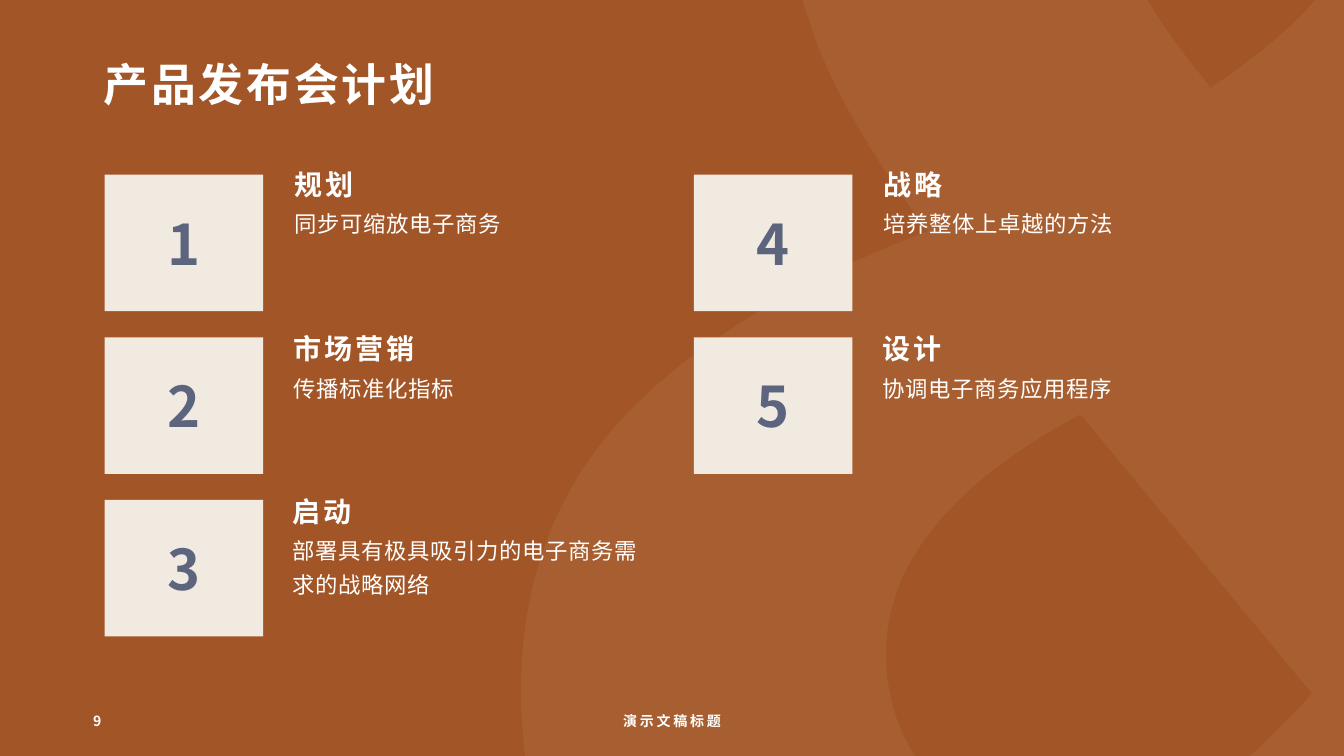
from typing import NamedTuple

from lxml.etree import SubElement
from pptx import Presentation
from pptx.dml.color import RGBColor
from pptx.enum.shapes import MSO_SHAPE
from pptx.enum.text import MSO_ANCHOR, PP_ALIGN
from pptx.oxml.ns import qn
from pptx.util import Cm, Pt

RUST = RGBColor(0xA2, 0x55, 0x26)
SAND = RGBColor(0xD6, 0xBF, 0xA5)
CREAM = RGBColor(0xF1, 0xEA, 0xE1)
SLATE = RGBColor(0x5D, 0x65, 0x7E)
WHITE = RGBColor(0xFF, 0xFF, 0xFF)
FONT = "Noto Sans CJK SC"

WIDTH, HEIGHT = 33.87, 19.05
BOX_WIDTH, BOX_HEIGHT = 3.99, 3.44
COLUMN_LEFTS = (2.64, 17.49)
BOX_TOP, ROW_PITCH = 4.4, 4.1
HEADING_TOPS = (4.25, 8.4, 12.49)

Point = tuple[float, float]


class Step(NamedTuple):
    number: str
    heading: str
    detail: str
    column: int
    row: int


STEPS = (
    Step("1", "规划", "同步可缩放电子商务", 0, 0),
    Step("2", "市场营销", "传播标准化指标", 0, 1),
    Step("3", "启动", "部署具有极具吸引力的电子商务需求的战略网络", 0, 2),
    Step("4", "战略", "培养整体上卓越的方法", 1, 0),
    Step("5", "设计", "协调电子商务应用程序", 1, 1),
)

# Each segment holds one point for a line, or three for a Bézier curve.
RIBBON_START: Point = (23.39, 5.82)
RIBBON: tuple[tuple[Point, ...], ...] = (
    ((19.81, 7.21), (17.22, 8.84), (15.57, 10.67)),
    ((13.94, 12.5), (13.13, 14.76), (13.13, 17.42)),
    ((13.13, 17.98), (13.18, 18.54), (13.23, HEIGHT)),
    ((23.06, HEIGHT),),
    ((22.58, 18.31), (22.33, 17.45), (22.33, 16.46)),
    ((22.33, 15.34), (22.73, 14.27), (23.55, 13.28)),
    ((24.33, 12.29), (25.55, 11.35), (27.23, 10.44)),
    ((33.07, 17.48),),
    ((32.51, 18.08), (31.98, 18.62), (31.5, HEIGHT)),
    ((WIDTH, HEIGHT),),
    ((WIDTH, 0),),
    ((33.15, 0),),
    ((32.51, 0.74), (31.62, 1.47), (30.51, 2.21)),
    ((29.85, 1.4), (29.31, 0.66), (28.91, 0)),
    ((20.22, 0),),
    ((20.35, 0.38), (20.47, 0.79), (20.62, 1.17)),
    ((21.18, 2.59), (22.12, 4.14), RIBBON_START),
)


def set_plain_fill(s, color: RGBColor) -> None:
    s.shadow.inherit = False
    s.fill.solid()
    s.fill.fore_color.rgb = color
    s.line.fill.background()


def bend_segments(s) -> None:
    """Turn the straight segments that have control points into curves."""
    lines = list(s._element.iter(qn("a:lnTo")))
    for line, segment in zip(lines, RIBBON):
        if len(segment) == 1:
            continue
        line.tag = qn("a:cubicBezTo")
        for i, (x, y) in enumerate(segment[:-1]):
            control = SubElement(line, qn("a:pt"),
                                 x=str(Cm(x) - s.left), y=str(Cm(y) - s.top))
            line.insert(i, control)


def add_ribbon(slide) -> None:
    ends = [(Cm(x), Cm(y)) for x, y in (segment[-1] for segment in RIBBON)]
    builder = slide.shapes.build_freeform(*ends[-1])
    builder.add_line_segments(ends, close=True)
    s = builder.convert_to_shape()
    bend_segments(s)
    set_plain_fill(s, SAND)
    color = next(s._element.spPr.iter(qn("a:srgbClr")))
    SubElement(color, qn("a:alpha"), val="10000")


def write_text(s, text: str, *, size: float, color: RGBColor = WHITE,
               bold: bool = True, tracking: float = 2,
               align: PP_ALIGN = PP_ALIGN.LEFT,
               anchor: MSO_ANCHOR = MSO_ANCHOR.TOP,
               line_spacing: float = 1, space_before: float = 0) -> None:
    tf = s.text_frame
    tf.word_wrap = True
    tf.vertical_anchor = anchor
    p = tf.paragraphs[0]
    p.alignment = align
    p.line_spacing = line_spacing
    p.space_before = Pt(space_before)
    r = p.add_run()
    r.text = text
    r.font.size = Pt(size)
    r.font.bold = bold
    r.font.name = FONT
    r.font.color.rgb = color
    properties = r._r.get_or_add_rPr()
    properties.set("lang", "zh-CN")
    properties.set("spc", str(round(tracking * 100)))
    SubElement(properties, qn("a:ea"), typeface=FONT)


def add_text(slide, text: str, left: float, top: float,
             width: float, height: float, **style) -> None:
    s = slide.shapes.add_textbox(Cm(left), Cm(top), Cm(width), Cm(height))
    write_text(s, text, **style)


def add_step(slide, step: Step) -> None:
    left = COLUMN_LEFTS[step.column]
    box = slide.shapes.add_shape(
        MSO_SHAPE.RECTANGLE, Cm(left), Cm(BOX_TOP + step.row * ROW_PITCH),
        Cm(BOX_WIDTH), Cm(BOX_HEIGHT))
    set_plain_fill(box, CREAM)
    write_text(box, step.number, size=40, color=SLATE,
               align=PP_ALIGN.CENTER, anchor=MSO_ANCHOR.MIDDLE)
    text_left = left + 4.53 - 0.02 * step.row
    top = HEADING_TOPS[step.row]
    add_text(slide, step.heading, text_left, top, 9.35, 1.02,
             size=20, line_spacing=0.8, space_before=10)
    add_text(slide, step.detail, text_left, top + 0.75, 9.35, 2.8,
             size=16, bold=False, tracking=0.5, line_spacing=1.25)


def main() -> None:
    prs = Presentation()
    prs.slide_width, prs.slide_height = Cm(WIDTH), Cm(HEIGHT)
    slide = prs.slides.add_slide(prs.slide_layouts[6])
    slide.background.fill.solid()
    slide.background.fill.fore_color.rgb = RUST
    add_ribbon(slide)
    add_text(slide, "产品发布会计划", 2.36, 1.45, 28.63, 1.5,
             size=32, line_spacing=0.9)
    for step in STEPS:
        add_step(slide, step)
    add_text(slide, "9", 2.1, 17.65, 7.62, 1.02,
             size=10, anchor=MSO_ANCHOR.MIDDLE)
    add_text(slide, "演示文稿标题", 11.22, 17.65, 11.43, 1.02, size=10,
             align=PP_ALIGN.CENTER, anchor=MSO_ANCHOR.MIDDLE)
    prs.save("out.pptx")


if __name__ == "__main__":
    main()
